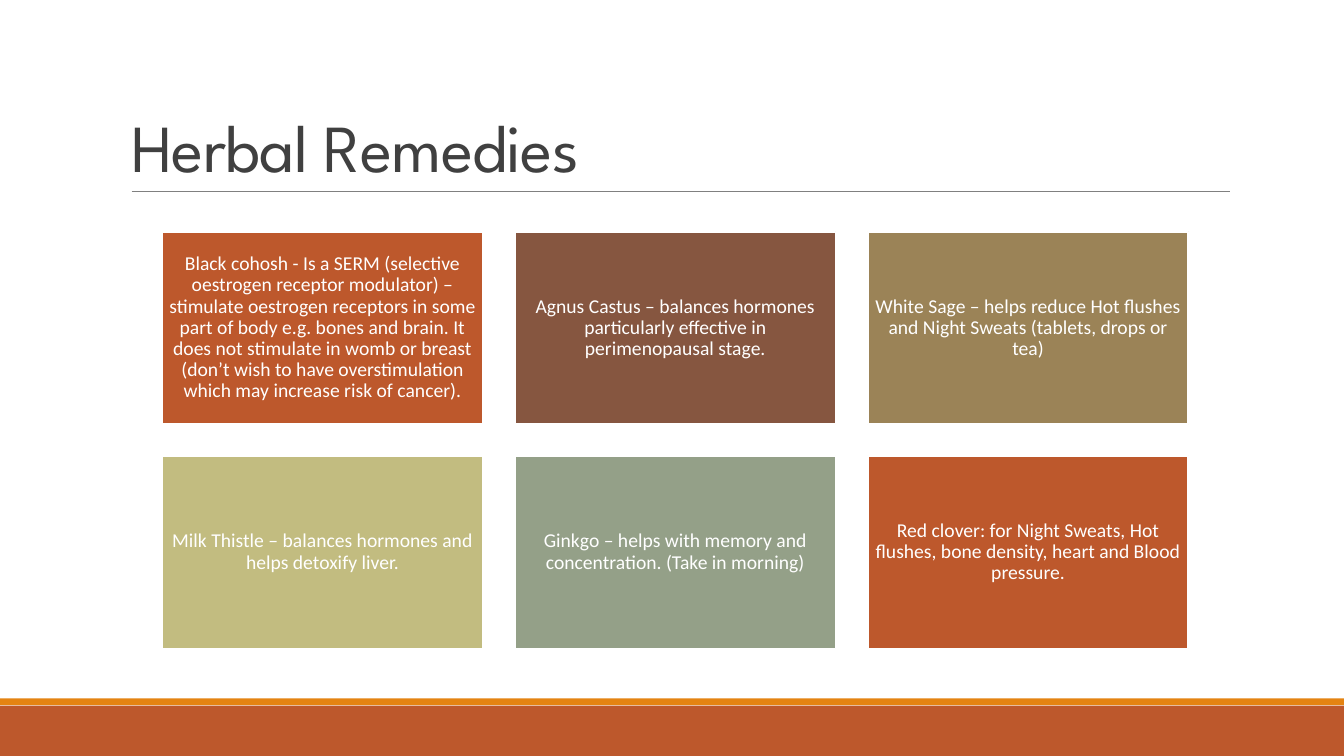
from pptx import Presentation
from pptx.dml.color import RGBColor
from pptx.enum import shapes, text
from pptx.oxml import parse_xml
from pptx.oxml.ns import nsdecls
from pptx.util import Cm, Pt

# Content
TITLE = "Herbal Remedies"
REMEDIES = [
    ("Black cohosh - Is a SERM (selective oestrogen receptor modulator) – stimulate "
     "oestrogen receptors in some part of body e.g. bones and brain. It does not "
     "stimulate in womb or breast (don’t wish to have overstimulation which may "
     "increase risk of cancer).", "rust"),
    ("Agnus Castus – balances hormones particularly effective in perimenopausal stage.",
     "brown"),
    ("White Sage – helps reduce Hot flushes and Night Sweats (tablets, drops or tea)",
     "tan"),
    ("Milk Thistle – balances hormones and helps detoxify liver.", "straw"),
    ("Ginkgo – helps with memory and concentration. (Take in morning)", "sage"),
    ("Red clover: for Night Sweats, Hot flushes, bone density, heart and Blood pressure.",
     "rust"),
]
COLORS = {
    "rust": "BD582C", "orange": "E48312", "brown": "865640", "tan": "9B8357",
    "straw": "C2BC80", "sage": "94A088", "title": "404040", "rule": "808080",
    "white": "FFFFFF",
}

# Layout, in centimetres
SLIDE_WIDTH, SLIDE_HEIGHT = 33.87, 19.05
COLUMNS = 3
CARD_LEFT, CARD_TOP = 4.09, 5.84
CARD_WIDTH, CARD_HEIGHT = 8.08, 4.85
COLUMN_STEP, ROW_STEP = 8.89, 5.65


def color(name):
    return RGBColor.from_string(COLORS[name])


def add_rectangle(slide, left, top, width, height, fill):
    shape = slide.shapes.add_shape(
        shapes.MSO_SHAPE.RECTANGLE, Cm(left), Cm(top), Cm(width), Cm(height))
    shape.shadow.inherit = False
    shape.fill.solid()
    shape.fill.fore_color.rgb = color(fill)
    shape.line.fill.background()
    return shape


def format_text(paragraph, font_name, size, font_color, alignment, line_spacing):
    paragraph.alignment = alignment
    paragraph.line_spacing = line_spacing
    font = paragraph.runs[0].font
    font.name, font.size = font_name, Pt(size)
    font.color.rgb = color(font_color)


def add_card(slide, left, top, wording, fill):
    card = add_rectangle(slide, left, top, CARD_WIDTH, CARD_HEIGHT, fill)
    card.line.color.rgb = color("white")
    card.line.width = Pt(1.25)
    frame = card.text_frame
    frame.word_wrap = True
    frame.vertical_anchor = text.MSO_ANCHOR.MIDDLE
    frame.margin_left = frame.margin_right = Cm(0.15)
    frame.margin_top = frame.margin_bottom = Cm(0.15)
    frame.text = wording
    format_text(frame.paragraphs[0], "Calibri", 14, "white", text.PP_ALIGN.CENTER, 0.9)


def main():
    presentation = Presentation()
    presentation.slide_width = Cm(SLIDE_WIDTH)
    presentation.slide_height = Cm(SLIDE_HEIGHT)
    slide = presentation.slides.add_slide(presentation.slide_layouts[5])

    # Footer bands
    add_rectangle(slide, 0, 17.78, SLIDE_WIDTH, 1.27, "rust")
    add_rectangle(slide, 0, 17.6, SLIDE_WIDTH, 0.17, "orange")

    # Title and the rule below it
    title = slide.shapes.title
    title.left, title.top, title.width, title.height = Cm(3.05), Cm(0.79), Cm(27.94), Cm(4.04)
    frame = title.text_frame
    frame.text = TITLE
    frame.auto_size = text.MSO_AUTO_SIZE.NONE
    frame.vertical_anchor = text.MSO_ANCHOR.BOTTOM
    paragraph = frame.paragraphs[0]
    format_text(paragraph, "League Spartan", 48, "title", text.PP_ALIGN.LEFT, 0.85)
    paragraph.runs[0]._r.get_or_add_rPr().set("spc", "-50")

    rule = slide.shapes.add_connector(
        shapes.MSO_CONNECTOR.STRAIGHT, Cm(3.32), Cm(4.83), Cm(31), Cm(4.83))
    rule.line.color.rgb = color("rule")
    rule.line.width = Pt(0.5)
    rule._element.spPr.append(parse_xml(f"<a:effectLst {nsdecls('a')}/>"))

    # Remedy cards
    for index, (wording, fill) in enumerate(REMEDIES):
        row, column = divmod(index, COLUMNS)
        add_card(slide, CARD_LEFT + column * COLUMN_STEP, CARD_TOP + row * ROW_STEP,
                 wording, fill)

    presentation.save("out.pptx")


if __name__ == "__main__":
    main()
